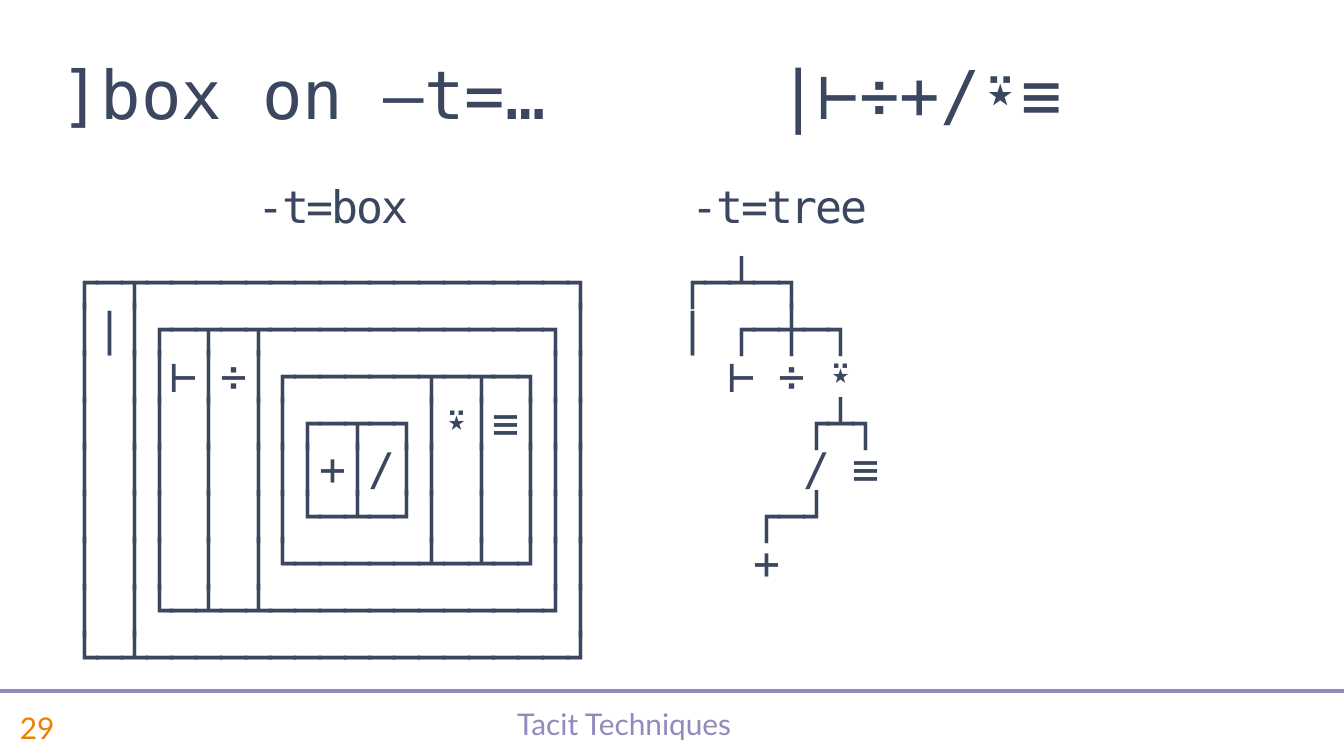
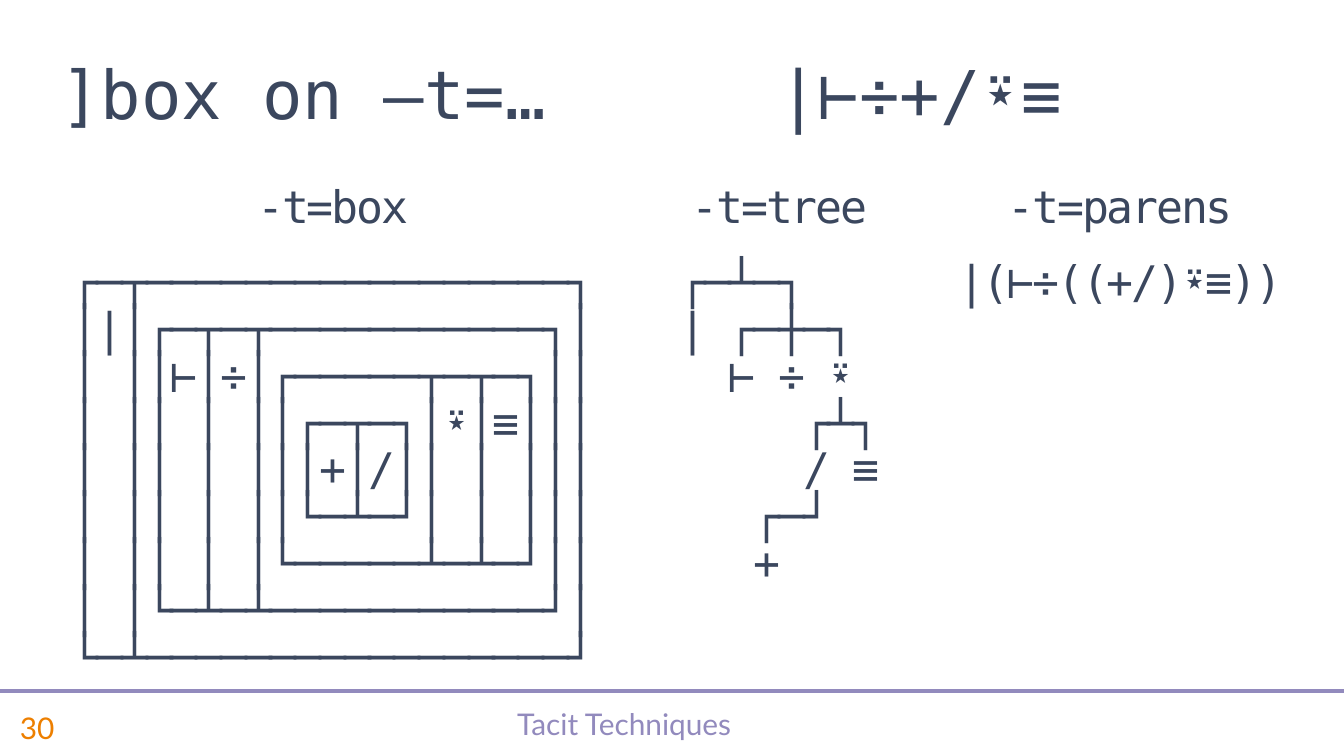
from dataclasses import dataclass

from lxml import etree
from pptx import Presentation
from pptx.dml.color import RGBColor
from pptx.enum.shapes import MSO_CONNECTOR
from pptx.enum.text import MSO_ANCHOR, PP_ALIGN
from pptx.oxml.ns import qn
from pptx.slide import Slide
from pptx.table import _Cell
from pptx.text.text import _Paragraph
from pptx.util import Inches, Pt

LEFT, CENTER = PP_ALIGN.LEFT, PP_ALIGN.CENTER
MIDDLE, BOTTOM = MSO_ANCHOR.MIDDLE, MSO_ANCHOR.BOTTOM
STRAIGHT = MSO_CONNECTOR.STRAIGHT

INK, LILAC, ORANGE = "3B475E", "928ABD", "ED7F00"
MONO, SANS = "DejaVu Sans Mono", "Lato"
PLAIN_TABLE_STYLE = "{2D5ABB26-0587-4C30-8999-92F81FD0307C}"

SLIDE_W = 10
SLIDE_H = SLIDE_W * 9 / 16
RULE_Y = 5.14
FOOTER_TOP, FOOTER_H = 5.19, 0.44
TABLE_LEFT, TABLE_TOP, TABLE_H = 0.35, 1.38, 3.8
COL_WIDTHS = (4.25, 2.4, 2.67)
ROW_HEIGHTS = (0.56, 2.9)
TITLE_TAB = 7.45

BOX = """\
┌─┬─────────────────┐
│|│┌─┬─┬───────────┐│
│ ││⊢│÷│┌─────┬─┬─┐││
│ ││ │ ││┌─┬─┐│⍣│≡│││
│ ││ │ │││+│/││ │ │││
│ ││ │ ││└─┴─┘│ │ │││
│ ││ │ │└─────┴─┴─┘││
│ │└─┴─┴───────────┘│
└─┴─────────────────┘"""

TREE = """\
 ┌─┴─┐
 | ┌─┼─┐
   ⊢ ÷ ⍣
      ┌┴┐
      / ≡
    ┌─┘
    +"""


@dataclass(frozen=True)
class TextStyle:
    font: str
    size: float
    color: str
    spacing: float = 0
    line_spacing: float = 1.0


@dataclass(frozen=True)
class Display:
    option: str
    output: str
    align: PP_ALIGN = CENTER
    indent: float = 0


TITLE = TextStyle(MONO, 36, INK)
CODE = TextStyle(MONO, 24, INK, spacing=-1.2, line_spacing=0.9)
FOOTER = TextStyle(SANS, 16, LILAC, line_spacing=0.8)
NUMBER = TextStyle(SANS, 16, ORANGE)

BOX_DISPLAY = Display("-t=box", BOX)
TREE_DISPLAY = Display("-t=tree", TREE, LEFT, 0.27)
PARENS_DISPLAY = Display("-t=parens", "|(⊢÷((+/)⍣≡))")


def rgb(color: str) -> RGBColor:
    return RGBColor.from_string(color)


def add_run(p: _Paragraph, text: str, style: TextStyle) -> None:
    p.line_spacing = style.line_spacing
    r = p.add_run()
    r.text = text
    r.font.size = Pt(style.size)
    r.font.color.rgb = rgb(style.color)
    r.font.name = style.font
    rpr = r.font._element
    for tag in ("a:ea", "a:cs"):
        etree.SubElement(rpr, qn(tag)).set("typeface", style.font)
    if style.spacing:
        rpr.set("spc", str(round(style.spacing * 100)))


def add_text(s: Slide, left: float, top: float, width: float, height: float,
             text: str, style: TextStyle, align: PP_ALIGN = LEFT,
             anchor: MSO_ANCHOR = MIDDLE, tab: float = 0) -> None:
    tf = s.shapes.add_textbox(Inches(left), Inches(top),
                              Inches(width), Inches(height)).text_frame
    tf.word_wrap = True
    tf.vertical_anchor = anchor
    p = tf.paragraphs[0]
    p.alignment = align
    add_run(p, text, style)
    if tab:
        tabs = etree.SubElement(p._p.get_or_add_pPr(), qn("a:tabLst"))
        stop = etree.SubElement(tabs, qn("a:tab"))
        stop.set("pos", str(Inches(tab)))
        stop.set("algn", "r")


def fill_cell(cell: _Cell, text: str, align: PP_ALIGN = CENTER,
              indent: float = 0) -> None:
    cell.margin_left = Inches(indent)
    tf = cell.text_frame
    for i, line in enumerate(text.splitlines()):
        p = tf.add_paragraph() if i else tf.paragraphs[0]
        p.alignment = align
        add_run(p, line, CODE)


def add_display_table(s: Slide, displays: list[Display]) -> None:
    frame = s.shapes.add_table(
        len(ROW_HEIGHTS), len(COL_WIDTHS), Inches(TABLE_LEFT),
        Inches(TABLE_TOP), Inches(sum(COL_WIDTHS)), Inches(TABLE_H))
    table = frame.table
    table.first_row = table.horz_banding = False
    table._tbl.tblPr.find(qn("a:tableStyleId")).text = PLAIN_TABLE_STYLE
    for col, width in zip(table.columns, COL_WIDTHS):
        col.width = Inches(width)
    for row, height in zip(table.rows, ROW_HEIGHTS):
        row.height = Inches(height)
    frame.height = Inches(TABLE_H)
    for cell in table.iter_cells():
        cell.fill.background()
        cell.margin_left = cell.margin_right = Inches(0)
        cell.margin_top = cell.margin_bottom = Inches(0)
    for i, display in enumerate(displays):
        fill_cell(table.cell(0, i), display.option)
        fill_cell(table.cell(1, i), display.output, display.align,
                  display.indent)


def add_footer(s: Slide, number: int) -> None:
    add_text(s, 0.78, FOOTER_TOP, 7.73, FOOTER_H, "Tacit Techniques",
             FOOTER, CENTER)
    add_text(s, 0.05, FOOTER_TOP, 0.73, FOOTER_H, str(number), NUMBER)
    rule = s.shapes.add_connector(STRAIGHT, Inches(0), Inches(RULE_Y),
                                  Inches(SLIDE_W), Inches(RULE_Y))
    rule.line.color.rgb = rgb(LILAC)
    rule.line.width = Pt(2.25)
    etree.SubElement(rule._element.spPr, qn("a:effectLst"))


def add_display_slide(prs: Presentation, number: int,
                      displays: list[Display]) -> None:
    s = prs.slides.add_slide(prs.slide_layouts[6])
    add_footer(s, number)
    add_display_table(s, displays)
    add_text(s, 0.35, 0.29, 7.66, 0.75, "]box on –t=…\t|⊢÷+/⍣≡", TITLE,
             anchor=BOTTOM, tab=TITLE_TAB)


def main() -> None:
    prs = Presentation()
    prs.slide_width, prs.slide_height = Inches(SLIDE_W), Inches(SLIDE_H)
    displays = [BOX_DISPLAY, TREE_DISPLAY]
    add_display_slide(prs, 29, displays)
    add_display_slide(prs, 30, displays + [PARENS_DISPLAY])
    prs.save("out.pptx")


if __name__ == "__main__":
    main()
